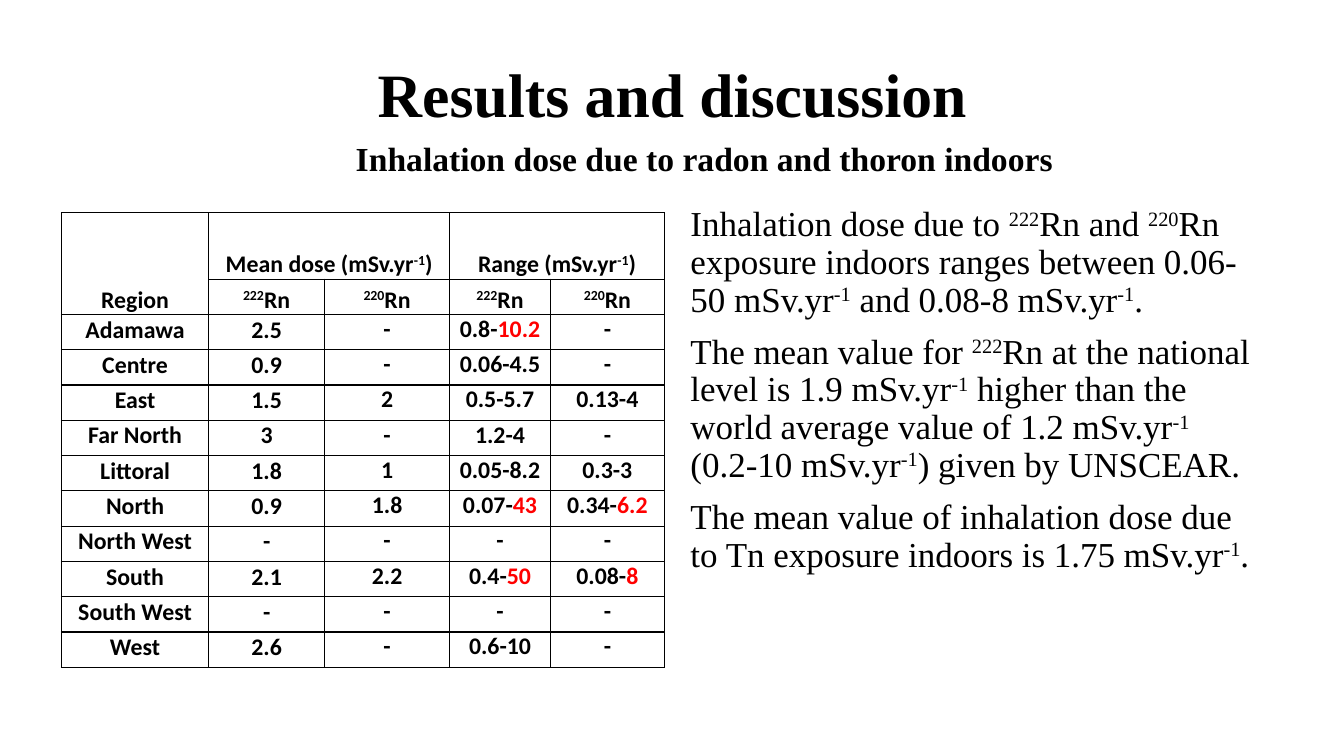
from pptx import Presentation
from pptx.dml.color import RGBColor
from pptx.enum.text import MSO_ANCHOR as Anchor, PP_ALIGN as Align
from pptx.oxml import parse_xml
from pptx.oxml.ns import nsdecls
from pptx.util import Emu, Pt

SERIF, SANS = "Times New Roman", "Calibri"
BLACK, RED = "000000", "FF0000"
COLUMN_WIDTHS = [146, 115, 124, 100, 113]
HEADER_HEIGHT, ROW_HEIGHT = 66, 35
SUPER, HIGH = "^", "!"

DOSES = [
    ["Region", "Mean dose (mSv.yr|^-1|)", "", "Range (mSv.yr|^-1|)", ""],
    ["", "^222|Rn", "^220|Rn", "^222|Rn", "^220|Rn"],
    ["Adamawa", "2.5", "-", "0.8-|!10.2", "-"],
    ["Centre", "0.9", "-", "0.06-4.5", "-"],
    ["East", "1.5", "2", "0.5-5.7", "0.13-4"],
    ["Far North", "3", "-", "1.2-4", "-"],
    ["Littoral", "1.8", "1", "0.05-8.2", "0.3-3"],
    ["North", "0.9", "1.8", "0.07-|!43", "0.34-|!6.2"],
    ["North West", "-", "-", "-", "-"],
    ["South", "2.1", "2.2", "0.4-|!50", "0.08-|!8"],
    ["South West", "-", "-", "-", "-"],
    ["West", "2.6", "-", "0.6-10", "-"],
]

FINDINGS = [
    "Inhalation dose due to |^222|Rn and |^220|Rn exposure indoors ranges between "
    "0.06-50 mSv.yr|^-1| and 0.08-8 mSv.yr|^-1|.",
    "The mean value for |^222|Rn at the national level is 1.9 mSv.yr|^-1| higher than "
    "the world average value of 1.2 mSv.yr|^-1| (0.2-10 mSv.yr|^-1|) given by UNSCEAR.",
    "The mean value of inhalation dose due to Tn exposure indoors is 1.75 mSv.yr|^-1|.",
]


def px(length):
    """Turn a length in px, 100 to the inch, into EMU."""
    return Emu(length * 9144)


def color(code):
    """Turn a hex string into a colour."""
    return RGBColor.from_string(code)


def assign(target, values):
    """Set attributes from a dict of format values."""
    for name, value in values.items():
        setattr(target, name, value)


def write(paragraph, marked, font, **layout):
    """Write text whose parts, split by bars, may be marked as raised or red."""
    assign(paragraph, layout)
    for part in marked.split("|"):
        run = paragraph.add_run()
        run.text = part.lstrip(SUPER + HIGH)
        assign(run.font, font)
        run.font.color.rgb = color(RED if part.startswith(HIGH) else BLACK)
        if part.startswith(SUPER):
            run.font._element.set("baseline", "30000")


def place(shape, box):
    """Move a shape to a box given in px."""
    assign(shape, dict(zip(("left", "top", "width", "height"), map(px, box))))


def add_heading(slide, box):
    """Format the title placeholder in the box."""
    heading = slide.shapes.title
    place(heading, box)
    heading.text_frame.vertical_anchor = Anchor.MIDDLE
    write(heading.text_frame.paragraphs[0], "Results and discussion",
          {"name": SERIF, "size": Pt(44), "bold": True},
          alignment=Align.CENTER, line_spacing=0.9)


def add_paragraphs(slide, box, texts, font, **layout):
    """Fill a wrapping text box with one paragraph for each text."""
    frame = slide.shapes.add_textbox(*map(px, box)).text_frame
    frame.word_wrap = True
    for index, text in enumerate(texts):
        paragraph = frame.add_paragraph() if index else frame.paragraphs[0]
        write(paragraph, text, font, **layout)


def add_borders(cell):
    """Draw a thin black line on each side of a cell."""
    properties = cell._tc.get_or_add_tcPr()
    for side in "LRTB":
        properties.append(parse_xml(
            f'<a:ln{side} {nsdecls("a")} w="12700"><a:solidFill>'
            f'<a:srgbClr val="{BLACK}"/></a:solidFill></a:ln{side}>'))


def add_dose_table(slide, left, top):
    """Build the table of doses by region from its top left corner."""
    heights = [HEADER_HEIGHT] + [ROW_HEIGHT] * (len(DOSES) - 1)
    table = slide.shapes.add_table(
        len(DOSES), len(COLUMN_WIDTHS), px(left), px(top),
        px(sum(COLUMN_WIDTHS)), px(sum(heights))).table
    assign(table, {"first_row": False, "horz_banding": False})
    for column, width in zip(table.columns, COLUMN_WIDTHS):
        column.width = px(width)
    for row, height in zip(table.rows, heights):
        row.height = px(height)
    for first, last in [((0, 0), (1, 0)), ((0, 1), (0, 2)), ((0, 3), (0, 4))]:
        table.cell(*first).merge(table.cell(*last))
    for r, row in enumerate(DOSES):
        for c, dose in enumerate(row):
            cell = table.cell(r, c)
            inset = px(1 if c < 2 else 0)
            assign(cell, {
                "margin_left": inset, "margin_right": inset,
                "margin_top": inset, "margin_bottom": 0,
                "vertical_anchor": Anchor.BOTTOM if r < 2 else Anchor.TOP})
            add_borders(cell)
            cell.fill.background()
            if not cell.is_spanned:
                write(cell.text_frame.paragraphs[0], dose,
                      {"name": SANS, "size": Pt(17), "bold": True},
                      alignment=Align.CENTER, space_after=Pt(6))


def main():
    """Build the slide and save it."""
    deck = Presentation()
    assign(deck, {"slide_width": px(1333), "slide_height": px(750)})
    slide = deck.slides.add_slide(deck.slide_layouts[5])
    add_heading(slide, (92, 40, 1150, 113))
    add_dose_table(slide, 61, 211)
    add_paragraphs(slide, (675, 200, 589, 443), FINDINGS,
                   {"name": SERIF, "size": Pt(25)},
                   line_spacing=0.9, space_before=Pt(10))
    add_paragraphs(slide, (343, 132, 779, 50),
                   ["Inhalation dose due to radon and thoron indoors"],
                   {"name": SERIF, "size": Pt(24), "bold": True})
    deck.save("out.pptx")


if __name__ == "__main__":
    main()
